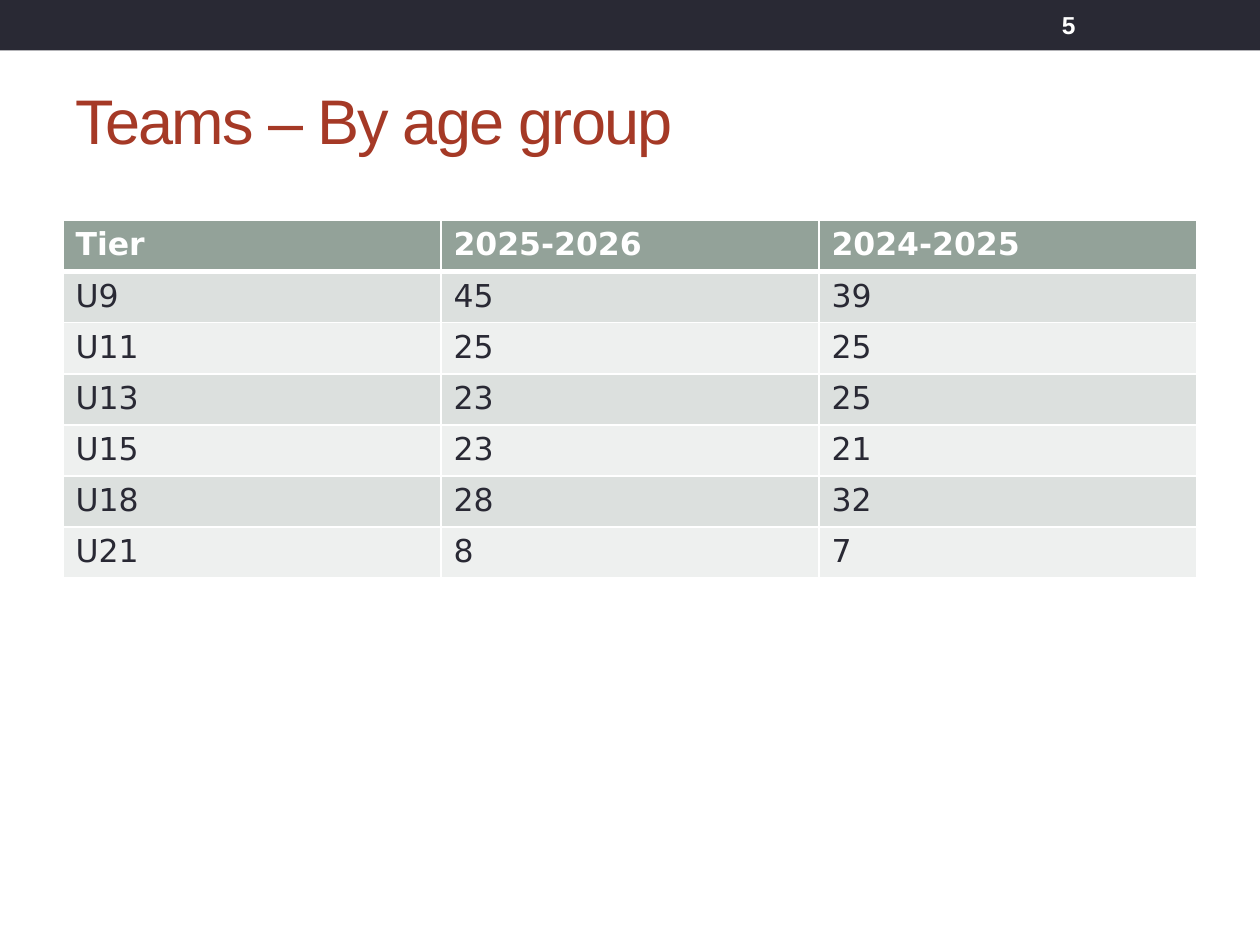
from dataclasses import dataclass

from lxml import etree
from pptx import Presentation
from pptx import util as u
from pptx.dml.color import RGBColor
from pptx.enum import shapes, text
from pptx.oxml import ns

COLUMNS, ROWS = 20, 75


@dataclass(frozen=True)
class Theme:
    """Colours, fonts and type sizes of the deck."""

    dark: str = "292934"
    accent: str = "A53926"
    light: str = "FFFFFF"
    header: str = "93A299"
    stripes: tuple = ("DCE0DE", "EEF0EF")
    font: str = "Arial"
    table_font: str = "DejaVu Sans"
    title_size: int = 36
    table_size: int = 18
    number_size: int = 14


THEME = Theme()
TEAMS = [
    ("Tier", "2025-2026", "2024-2025"),
    ("U9", "45", "39"),
    ("U11", "25", "25"),
    ("U13", "23", "25"),
    ("U15", "23", "21"),
    ("U18", "28", "32"),
    ("U21", "8", "7"),
]


def grid_box(deck, column, row, columns, rows):
    """Return left, top, width and height for a block of grid cells."""
    across, down = deck.slide_width / COLUMNS, deck.slide_height / ROWS
    return [round(n) for n in (column * across, row * down, columns * across, rows * down)]


def write(frame, words, color, **formats):
    """Write one left-aligned line of formatted text and return its span."""
    para = frame.paragraphs[0]
    para.alignment = text.PP_ALIGN.LEFT
    span = para.add_run()
    span.text = words
    span.font.color.rgb = RGBColor.from_string(color)
    for name, value in formats.items():
        setattr(span.font, name, value)
    return span


def fill_solid(item, color):
    """Give a shape or cell a solid fill."""
    item.fill.solid()
    item.fill.fore_color.rgb = RGBColor.from_string(color)


def set_borders(cell, color, widths):
    """Draw the cell's borders from a map of side to points."""
    properties = cell._tc.get_or_add_tcPr()
    for side, points in widths.items():
        line = etree.SubElement(properties, ns.qn(f"a:ln{side}"), w=str(u.Pt(points)))
        solid = etree.SubElement(line, ns.qn("a:solidFill"))
        etree.SubElement(solid, ns.qn("a:srgbClr"), val=color)


def add_band(page, box):
    """Add the dark band along the top."""
    band = page.shapes.add_shape(shapes.MSO_SHAPE.RECTANGLE, *box)
    band.shadow.inherit = False
    fill_solid(band, THEME.dark)
    band.line.fill.background()


def add_title(page, box, words):
    """Place and format the title placeholder."""
    title = page.shapes.title
    title.left, title.top, title.width, title.height = box
    frame = title.text_frame
    frame.auto_size = text.MSO_AUTO_SIZE.NONE
    frame.vertical_anchor = text.MSO_ANCHOR.MIDDLE
    span = write(frame, words, THEME.accent, name=THEME.font, size=u.Pt(THEME.title_size))
    span.font._element.set("spc", "-100")


def add_team_table(page, box, records):
    """Add the striped table of team counts."""
    table = page.shapes.add_table(len(records), len(records[0]), *box).table
    for row in table.rows:
        row.height = round(box[3] / len(records))
    for index, record in enumerate(records):
        heading = index == 0
        fill = THEME.header if heading else THEME.stripes[(index - 1) % 2]
        ink = THEME.light if heading else THEME.dark
        widths = {"L": 1, "R": 1, "T": 3 if index == 1 else 1, "B": 3 if heading else 1}
        for column, words in enumerate(record):
            cell = table.cell(index, column)
            set_borders(cell, THEME.light, widths)
            fill_solid(cell, fill)
            write(cell.text_frame, words, ink, name=THEME.table_font,
                  size=u.Pt(THEME.table_size), bold=heading)


def add_page_number(page, box, words):
    """Add the page number on the band."""
    frame = page.shapes.add_textbox(*box).text_frame
    frame.word_wrap = True
    frame.vertical_anchor = text.MSO_ANCHOR.MIDDLE
    write(frame, words, THEME.light, name=THEME.font,
          size=u.Pt(THEME.number_size), bold=True)


def main():
    """Build and save the slide."""
    deck = Presentation()
    deck.slide_width, deck.slide_height = u.Inches(10), u.Inches(7.5)
    page = deck.slides.add_slide(deck.slide_layouts[5])
    add_band(page, grid_box(deck, 0, 0, COLUMNS, 4))
    add_title(page, grid_box(deck, 1, 5.8, 18, 7.3), "Teams – By age group")
    add_team_table(page, grid_box(deck, 1, 17.5, 18, 28.4), TEAMS)
    add_page_number(page, grid_box(deck, 16.66, 0.2, 2.34, 3.6), "5")
    deck.save("out.pptx")


if __name__ == "__main__":
    main()
